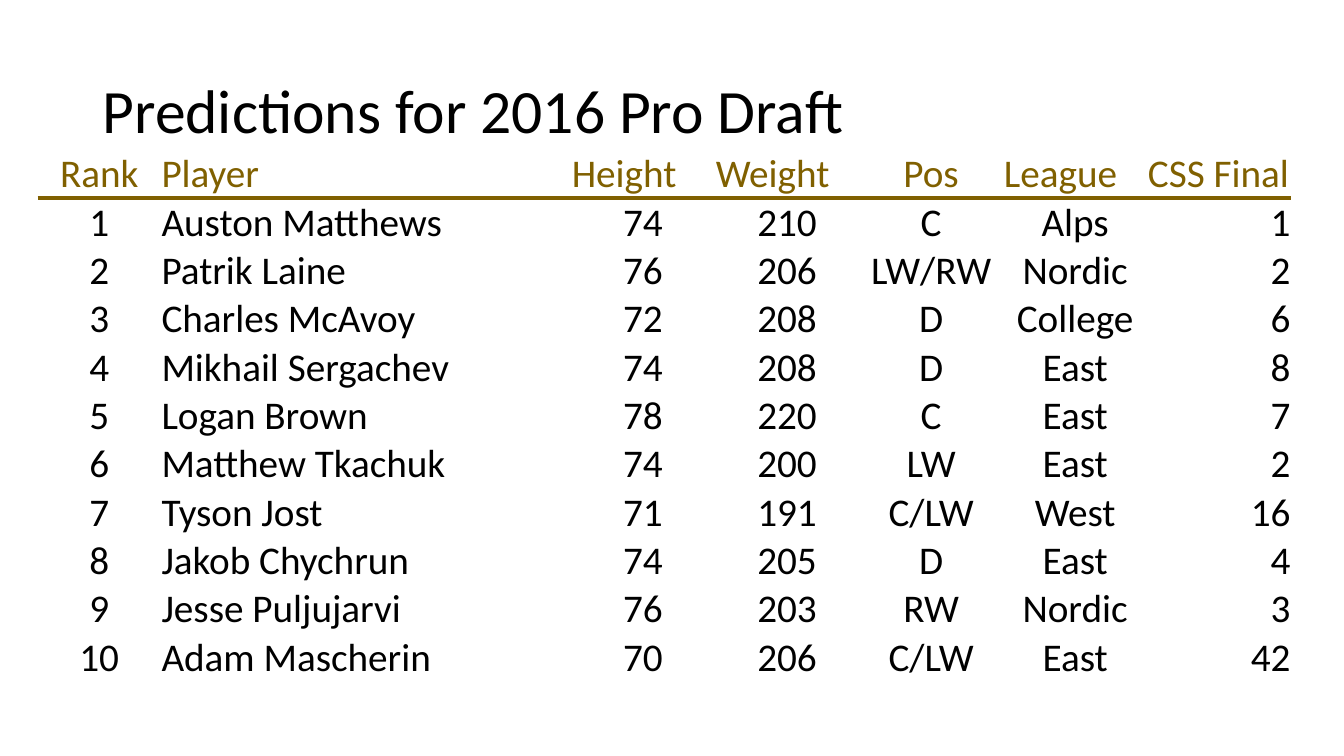
from lxml import etree
from pptx import Presentation
from pptx import util as u
from pptx.dml.color import RGBColor
from pptx.enum import text
from pptx.oxml import ns

GOLD, BLACK = "806000", "000000"
LEFT, CENTER, RIGHT = text.PP_ALIGN.LEFT, text.PP_ALIGN.CENTER, text.PP_ALIGN.RIGHT
NO_STYLE = "{2D5ABB26-0587-4C30-8999-92F81FD0307C}"


def style(paragraph, size, color, alignment):
    paragraph.alignment = alignment
    paragraph.font.name = "Calibri"
    paragraph.font.size = u.Pt(size)
    paragraph.font.bold = False
    paragraph.font.color.rgb = RGBColor.from_string(color)


def set_border(cell, side, visible):
    line = etree.Element(ns.qn(f"a:{side}"))
    if visible:
        line.set("w", str(u.Pt(3)))
        fill = etree.SubElement(line, ns.qn("a:solidFill"))
        etree.SubElement(fill, ns.qn("a:srgbClr"), val=GOLD)
    else:
        etree.SubElement(line, ns.qn("a:noFill"))
    cell._tc.get_or_add_tcPr().insert(0, line)


presentation = Presentation()
presentation.slide_width, presentation.slide_height = u.Cm(33.87), u.Cm(19.05)
slide = presentation.slides.add_slide(presentation.slide_layouts[5])

# Title
title = slide.shapes.title
title.left, title.top, title.width, title.height = u.Cm(2.33), u.Cm(1.01), u.Cm(29.21), u.Cm(3.68)
title.text_frame.text = "Predictions for 2016 Pro Draft"
title.text_frame.auto_size = text.MSO_AUTO_SIZE.NONE
title.text_frame.vertical_anchor = text.MSO_ANCHOR.MIDDLE
title.text_frame.paragraphs[0].line_spacing = 0.9
style(title.text_frame.paragraphs[0], 44, BLACK, LEFT)

# Draft ranking
headers = ["Rank", "Player", "Height", "Weight", "Pos", "League", "CSS Final"]
players = [
    ("Auston Matthews", 74, 210, "C", "Alps", 1),
    ("Patrik Laine", 76, 206, "LW/RW", "Nordic", 2),
    ("Charles McAvoy", 72, 208, "D", "College", 6),
    ("Mikhail Sergachev", 74, 208, "D", "East", 8),
    ("Logan Brown", 78, 220, "C", "East", 7),
    ("Matthew Tkachuk", 74, 200, "LW", "East", 2),
    ("Tyson Jost", 71, 191, "C/LW", "West", 16),
    ("Jakob Chychrun", 74, 205, "D", "East", 4),
    ("Jesse Puljujarvi", 76, 203, "RW", "Nordic", 3),
    ("Adam Mascherin", 70, 206, "C/LW", "East", 42),
]
rows = [headers] + [(rank, *player) for rank, player in enumerate(players, 1)]
header_alignments = [CENTER, LEFT, LEFT, LEFT, CENTER, LEFT, LEFT]
body_alignments = [CENTER, LEFT, CENTER, CENTER, CENTER, CENTER, RIGHT]

# Table frame, columns and rows
frame = slide.shapes.add_table(len(rows), len(headers), u.Cm(0.95), u.Cm(3.78), u.Cm(31.58), u.Cm(13.18))
table = frame.table
table.first_row = table.horz_banding = False
table._tbl.tblPr.find(ns.qn("a:tableStyleId")).text = NO_STYLE
for column, width in zip(table.columns, [3.1, 10.34] + [3.63] * 5):
    column.width = u.Cm(width)
for row in table.rows:
    row.height = u.Cm(1.09)
frame.height = u.Cm(13.18)

# Cells, with a rule under the header only
for row_index, values in enumerate(rows):
    is_header = row_index == 0
    alignments = header_alignments if is_header else body_alignments
    for column_index, value in enumerate(values):
        cell = table.cell(row_index, column_index)
        cell.text = str(value)
        cell.fill.background()
        cell.vertical_anchor = text.MSO_ANCHOR.BOTTOM
        cell.margin_left = cell.margin_right = u.Cm(0.02)
        cell.margin_top = u.Cm(0.01)
        cell.margin_bottom = 0
        style(cell.text_frame.paragraphs[0], 28, GOLD if is_header else BLACK, alignments[column_index])
        set_border(cell, "lnB", is_header)
        set_border(cell, "lnT", row_index == 1)

presentation.save("out.pptx")
